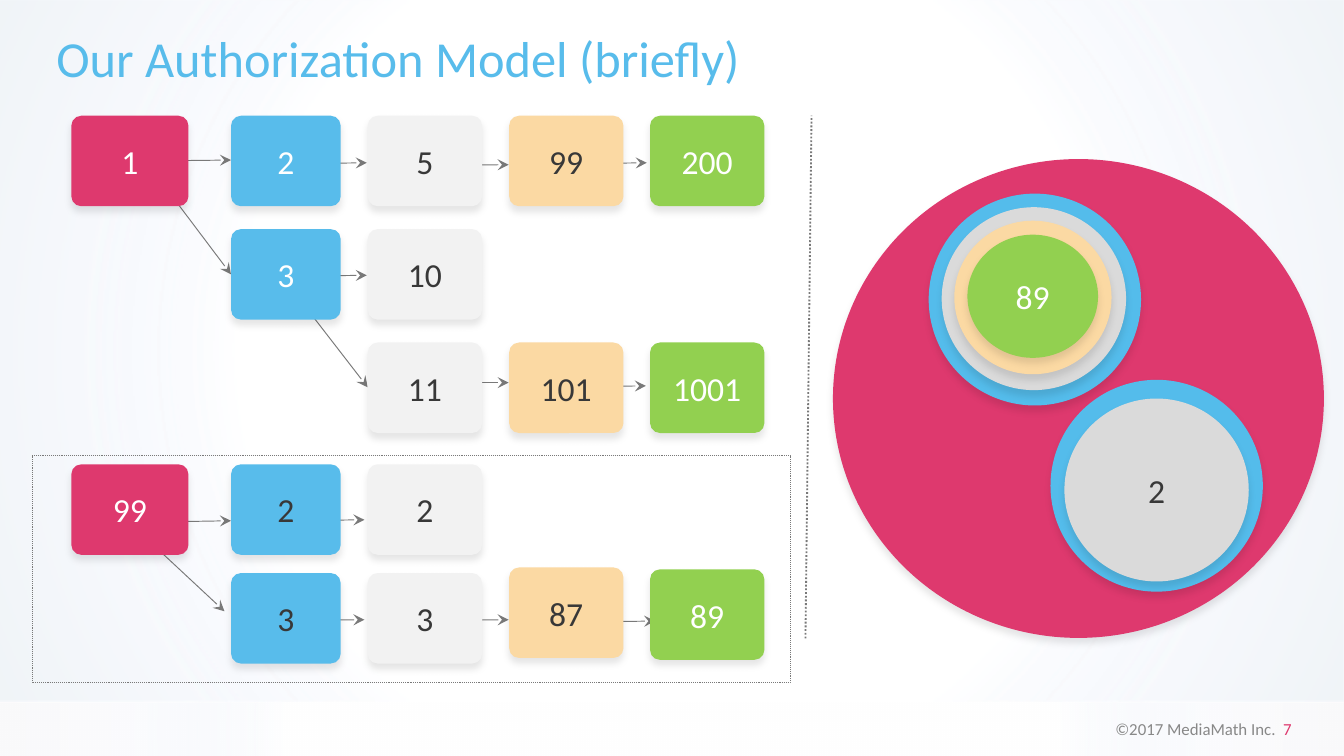
from typing import NamedTuple

from pptx import Presentation
from pptx.dml.color import RGBColor
from pptx.enum.dml import MSO_LINE
from pptx.enum.shapes import MSO_CONNECTOR, MSO_SHAPE
from pptx.enum.text import MSO_ANCHOR, PP_ALIGN
from pptx.oxml import parse_xml
from pptx.oxml.ns import nsdecls, qn
from pptx.util import Pt

RECT, ROUND, OVAL = MSO_SHAPE.RECTANGLE, MSO_SHAPE.ROUNDED_RECTANGLE, MSO_SHAPE.OVAL
STRAIGHT, DOTS = MSO_CONNECTOR.STRAIGHT, MSO_LINE.ROUND_DOT
LEFT, MID, RIGHT = PP_ALIGN.LEFT, PP_ALIGN.CENTER, PP_ALIGN.RIGHT
CENTRE = MSO_ANCHOR.MIDDLE
PINK, BLUE, SKY, GREEN = "DE396E", "58BCEB", "54BCEB", "92D050"
SAND, PALE, SILVER = "FBD9A3", "F2F2F2", "DADADA"
WHITE, DARK, GREY = "FFFFFF", "383838", "797979"


class Column(NamedTuple):
    left: float
    width: float
    fill: str


class Node(NamedTuple):
    label: str
    col: int
    top: float
    ink: str


class Arrow(NamedTuple):
    x1: float
    y1: float
    x2: float
    y2: float


class Disc(NamedTuple):
    left: float
    top: float
    width: float
    height: float
    fill: str
    label: str = ""
    ink: str = WHITE


COLUMNS = [
    Column(38.25, 62.75, PINK),
    Column(123.75, 58.75, BLUE),
    Column(197, 61.25, PALE),
    Column(272.75, 61.25, SAND),
    Column(348.25, 61.25, GREEN),
]
HIGH = 48.5
ROWS = [62 + 60.75 * row for row in range(3)] + [248.75, 307]

NODES = [
    Node("1", 0, ROWS[0], WHITE),
    Node("2", 1, ROWS[0], WHITE),
    Node("5", 2, ROWS[0], DARK),
    Node("99", 3, ROWS[0], DARK),
    Node("200", 4, ROWS[0], WHITE),
    Node("3", 1, ROWS[1], WHITE),
    Node("10", 2, ROWS[1], DARK),
    Node("11", 2, ROWS[2], DARK),
    Node("101", 3, ROWS[2], DARK),
    Node("1001", 4, ROWS[2], WHITE),
    Node("99", 0, ROWS[3], WHITE),
    Node("2", 1, ROWS[3], DARK),
    Node("2", 2, ROWS[3], DARK),
    Node("3", 1, ROWS[4], DARK),
    Node("3", 2, ROWS[4], DARK),
    Node("87", 3, 304, DARK),
    Node("89", 4, 305, WHITE),
]
ARROWS = [
    Arrow(78, 86.25, 123.75, 85.75),
    Arrow(151, 87.75, 196.5, 87.25),
    Arrow(227.5, 88.5, 272.5, 88.25),
    Arrow(301.5, 87.75, 346.5, 87.25),
    Arrow(78, 86.25, 123.75, 147),
    Arrow(151, 148, 196.5, 147.5),
    Arrow(151, 148, 197, 207.5),
    Arrow(227.5, 205, 272.5, 205),
    Arrow(301, 207.25, 346, 206.75),
    Arrow(78.5, 279.75, 123.75, 279),
    Arrow(150.5, 279, 195.25, 278.5),
    Arrow(65, 276, 120.25, 327.5),
    Arrow(150.5, 332.5, 195.25, 332),
    Arrow(227.5, 332.5, 272.5, 332),
    Arrow(306.5, 333.25, 351, 332.75),
]
DISCS = [
    Disc(446.25, 85.25, 263, 256.5, PINK),
    Disc(497.5, 103.75, 113.75, 113.5, SKY),
    Disc(504.5, 111, 98.75, 98, SILVER),
    Disc(511.25, 118.25, 84.25, 82.25, SAND),
    Disc(518.25, 125.75, 70, 66, GREEN, "89"),
    Disc(562.75, 203.5, 113.75, 113.5, SKY),
    Disc(570.25, 213.5, 98.75, 98, SILVER, "2", DARK),
]


def paint(hue: str) -> RGBColor:
    return RGBColor.from_string(hue)


def write(shape, text: str, *, size: float = 18, ink: str = WHITE, align=MID) -> None:
    """Add a run to the first paragraph of the shape."""
    frame = shape.text_frame
    frame.word_wrap = True
    frame.vertical_anchor = CENTRE
    para = frame.paragraphs[0]
    para.alignment = align
    run = para.add_run()
    run.text = text
    run.font.name = "Calibri"
    run.font.size = Pt(size)
    run.font.color.rgb = paint(ink)


def draw(slide, kind, left: float, top: float, width: float, height: float, fill: str = ""):
    """Add a flat shape without outline, unfilled if no colour is given."""
    shape = slide.shapes.add_shape(kind, Pt(left), Pt(top), Pt(width), Pt(height))
    shape.shadow.inherit = False
    shape.line.fill.background()
    if fill:
        shape.fill.solid()
        shape.fill.fore_color.rgb = paint(fill)
    else:
        shape.fill.background()
    return shape


def lift(shape) -> None:
    """Give the shape a soft shadow below."""
    shape.element.spPr.find(qn("a:effectLst")).append(parse_xml(
        f'<a:outerShdw {nsdecls("a")} blurRad="{Pt(4)}" dist="{Pt(3)}" dir="5400000" '
        'algn="t" rotWithShape="0"><a:srgbClr val="000000"><a:alpha val="10000"/>'
        '</a:srgbClr></a:outerShdw>'))


def glow(slide, top: float, height: float, stops: list[tuple[int, str, int]]) -> None:
    """Draw a full-width band with a radial gradient."""
    band = draw(slide, RECT, -0.5, top, 720.5, height)
    marks = "".join(
        f'<a:gs pos="{pos}000"><a:srgbClr val="{hue}"><a:alpha val="{alpha}000"/>'
        '</a:srgbClr></a:gs>' for pos, hue, alpha in stops)
    props = band.element.spPr
    props.replace(props.find(qn("a:noFill")), parse_xml(
        f'<a:gradFill {nsdecls("a")} rotWithShape="1"><a:gsLst>{marks}</a:gsLst>'
        '<a:path path="circle"><a:fillToRect l="50000" t="50000" r="50000" b="50000"/>'
        '</a:path></a:gradFill>'))


def link(slide, arrow: Arrow, width: float = 0.5):
    line = slide.shapes.add_connector(STRAIGHT, *(Pt(value) for value in arrow))
    line.line.width = Pt(width)
    line.line.color.rgb = paint(GREY)
    line.element.spPr.append(parse_xml(f'<a:effectLst {nsdecls("a")}/>'))
    return line


def point(line) -> None:
    """Put an oval at the start and a stealth head at the end."""
    stroke = line.element.spPr.find(qn("a:ln"))
    for tag, kind in (("headEnd", "oval"), ("tailEnd", "stealth")):
        stroke.append(parse_xml(f'<a:{tag} {nsdecls("a")} type="{kind}"/>'))


def main() -> None:
    deck = Presentation()
    deck.slide_width, deck.slide_height = Pt(720), Pt(405)
    slide = deck.slides.add_slide(deck.slide_layouts[5])

    glow(slide, 376.5, 29.5, [(57, WHITE, 100), (78, "F0F4FC", 29), (99, "F0EEF2", 30)])
    foot = slide.shapes.add_textbox(Pt(531.5), Pt(381.5), Pt(167.5), Pt(18))
    write(foot, "©2017 MediaMath Inc. ", size=9, ink="888888", align=RIGHT)
    write(foot, " 7", size=9, ink=PINK, align=RIGHT)
    glow(slide, 0, 376, [(57, WHITE, 100), (78, "F0F4FC", 50), (99, "E3EBF2", 50)])

    title = slide.shapes.title
    title.left, title.top, title.width, title.height = Pt(23), Pt(14.5), Pt(672), Pt(35)
    write(title, "Our Authorization Model (briefly)", size=27, ink=BLUE, align=LEFT)
    title.text_frame.paragraphs[0].line_spacing = Pt(30)
    title.element.getparent().append(title.element)  # in front of the bands

    for arrow in ARROWS:
        point(link(slide, arrow))
    for node in NODES:
        col = COLUMNS[node.col]
        box = draw(slide, ROUND, col.left, node.top, col.width, HIGH, col.fill)
        box.adjustments[0] = 0.11
        lift(box)
        write(box, node.label, ink=node.ink)

    rule = link(slide, Arrow(431.5, 342, 434.75, 62), width=1)
    rule.line.dash_style = DOTS
    frame = draw(slide, RECT, 17.25, 244.25, 406.25, 121.5)
    frame.line.color.rgb = paint(GREY)
    frame.line.width = Pt(0.5)
    frame.line.dash_style = DOTS

    for disc in DISCS:
        ring = draw(slide, OVAL, *disc[:5])
        lift(ring)
        if disc.label:
            write(ring, disc.label, ink=disc.ink)

    deck.save("out.pptx")


if __name__ == "__main__":
    main()
